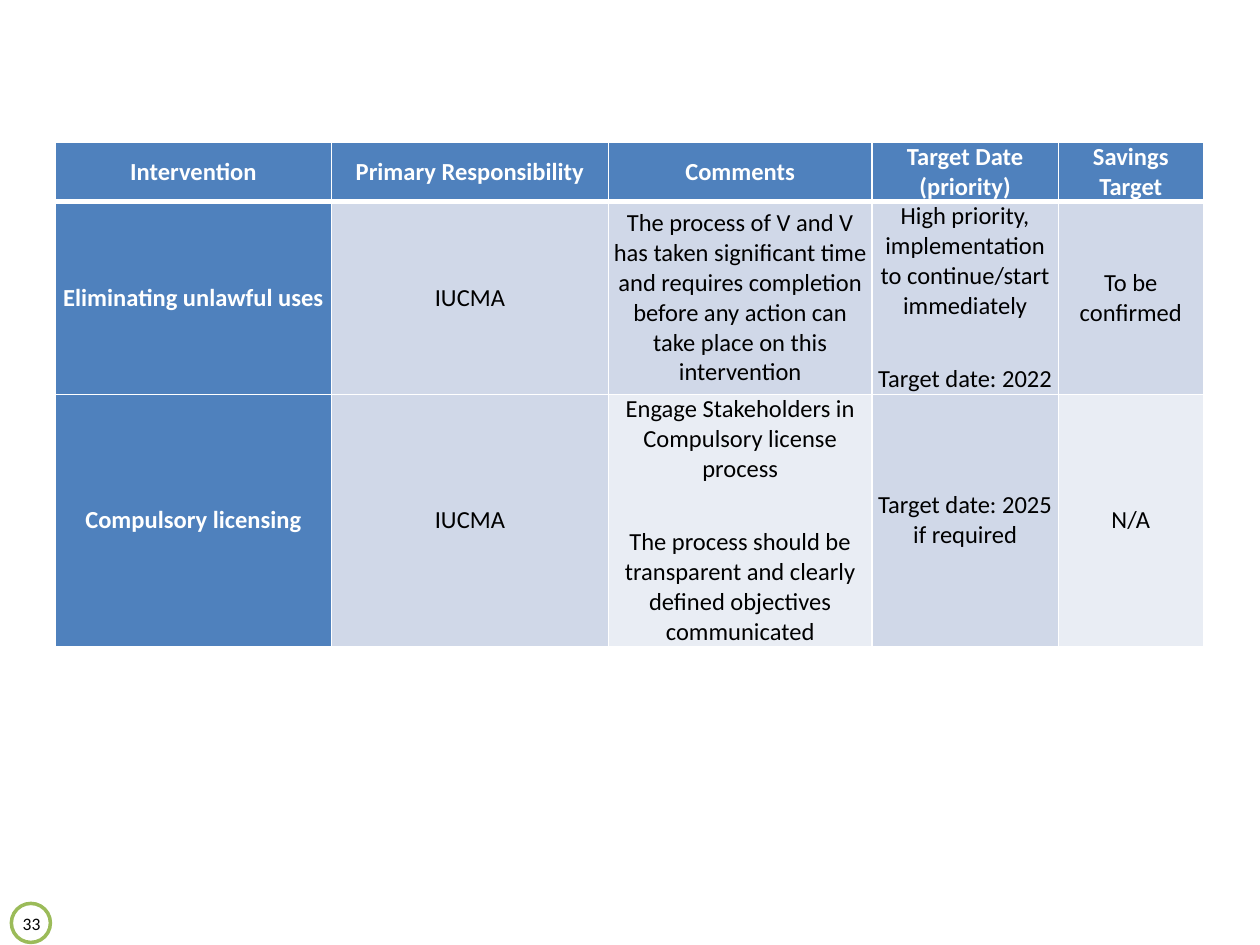
from dataclasses import dataclass

import pptx
import pptx.chart.data
import pptx.dml.color
import pptx.enum.shapes
import pptx.enum.text
import pptx.oxml
import pptx.oxml.ns
import pptx.util
from lxml import etree

Inches = pptx.util.Inches
Pt = pptx.util.Pt
CENTER = pptx.enum.text.PP_ALIGN.CENTER
MIDDLE = pptx.enum.text.MSO_ANCHOR.MIDDLE


@dataclass(frozen=True)
class Theme:
    font: str = "Calibri"
    table_size: int = 14
    number_size: int = 10
    white: str = "FFFFFF"
    black: str = "000000"
    header: str = "4F81BD"
    band: str = "D0D8E8"
    light: str = "E9EDF4"
    ring: str = "9BBB59"


def rgb(value):
    return pptx.dml.color.RGBColor.from_string(value)


class SlideBuilder:
    def __init__(self, slide, theme):
        self.s = slide
        self.theme = theme

    def format_paragraph(self, p, size, color, bold=False):
        p.alignment = CENTER
        for r in p.runs:
            r.font.name = self.theme.font
            r.font.size = Pt(size)
            r.font.bold = bold
            r.font.color.rgb = rgb(color)

    def ring(self, left, top, size):
        sp = self.s.shapes.add_shape(
            pptx.enum.shapes.MSO_SHAPE.OVAL,
            Inches(left), Inches(top), Inches(size), Inches(size))
        sp.shadow.inherit = False
        sp.fill.solid()
        sp.fill.fore_color.rgb = rgb(self.theme.white)
        sp.line.color.rgb = rgb(self.theme.ring)
        sp.line.width = Pt(2)

    def text(self, text, left, top, width, height):
        sp = self.s.shapes.add_textbox(
            Inches(left), Inches(top), Inches(width), Inches(height))
        tf = sp.text_frame
        tf.word_wrap = True
        tf.margin_left = tf.margin_right = 0
        tf.text = text
        self.format_paragraph(tf.paragraphs[0], self.theme.number_size, self.theme.black)

    def borders(self, cell, bottom=1):
        """Add white cell borders ahead of the fill, as the schema requires."""
        properties = cell._tc.get_or_add_tcPr()
        widths = {"lnL": 1, "lnR": 1, "lnT": 1, "lnB": bottom}
        for i, (side, width) in enumerate(widths.items()):
            line = etree.Element(pptx.oxml.ns.qn(f"a:{side}"), w=str(Pt(width)))
            fill = etree.SubElement(line, pptx.oxml.ns.qn("a:solidFill"))
            etree.SubElement(fill, pptx.oxml.ns.qn("a:srgbClr"), val=self.theme.white)
            properties.insert(i, line)

    def cell(self, cell, text, fill, is_heading, bottom):
        cell.fill.solid()
        cell.fill.fore_color.rgb = rgb(fill)
        cell.vertical_anchor = MIDDLE
        cell.margin_left = cell.margin_right = Inches(0.02)
        cell.margin_top = cell.margin_bottom = 0
        cell.text_frame.text = text
        color = self.theme.white if is_heading else self.theme.black
        for i, p in enumerate(cell.text_frame.paragraphs):
            self.format_paragraph(p, self.theme.table_size, color, is_heading)
            if i:
                p.space_before = Pt(25)
        self.borders(cell, bottom)

    def table(self, rows, fills, left, top, widths, heights):
        table = self.s.shapes.add_table(
            len(rows), len(widths), Inches(left), Inches(top),
            Inches(sum(widths)), Inches(sum(heights))).table
        for column, width in zip(table.columns, widths):
            column.width = Inches(width)
        for row, height in zip(table.rows, heights):
            row.height = Inches(height)
        for i, (texts, colors) in enumerate(zip(rows, fills)):
            for j, (text, fill) in enumerate(zip(texts, colors)):
                self.cell(table.cell(i, j), text, fill,
                          is_heading=i == 0 or j == 0, bottom=3 if i == 0 else 1)


INTERVENTIONS = [
    ["Intervention", "Primary Responsibility", "Comments",
     "Target Date (priority)", "Savings Target"],
    ["Eliminating unlawful uses", "IUCMA",
     "The process of V and V has taken significant time and requires "
     "completion before any action can take place on this intervention",
     "High priority, implementation to continue/start immediately\n"
     "Target date: 2022",
     "To be confirmed"],
    ["Compulsory licensing", "IUCMA",
     "Engage Stakeholders in Compulsory license process\n"
     "The process should be transparent and clearly defined objectives communicated",
     "Target date: 2025 if required", "N/A"],
]


def main():
    prs = pptx.Presentation()
    prs.slide_width = Inches(10)
    prs.slide_height = Inches(7.5)
    theme = Theme()
    builder = SlideBuilder(prs.slides.add_slide(prs.slide_layouts[6]), theme)

    builder.ring(0.09, 7.17, 0.31)
    builder.text("33", 0.09, 7.2, 0.32, 0.2)
    fills = [
        [theme.header] * 5,
        [theme.header] + [theme.band] * 4,
        [theme.header, theme.band, theme.light, theme.band, theme.light],
    ]
    builder.table(INTERVENTIONS, fills, 0.44, 1.13,
                  widths=[2.19, 2.2, 2.09, 1.48, 1.15], heights=[0.47, 1.53, 2])
    prs.save("out.pptx")


if __name__ == "__main__":
    main()
